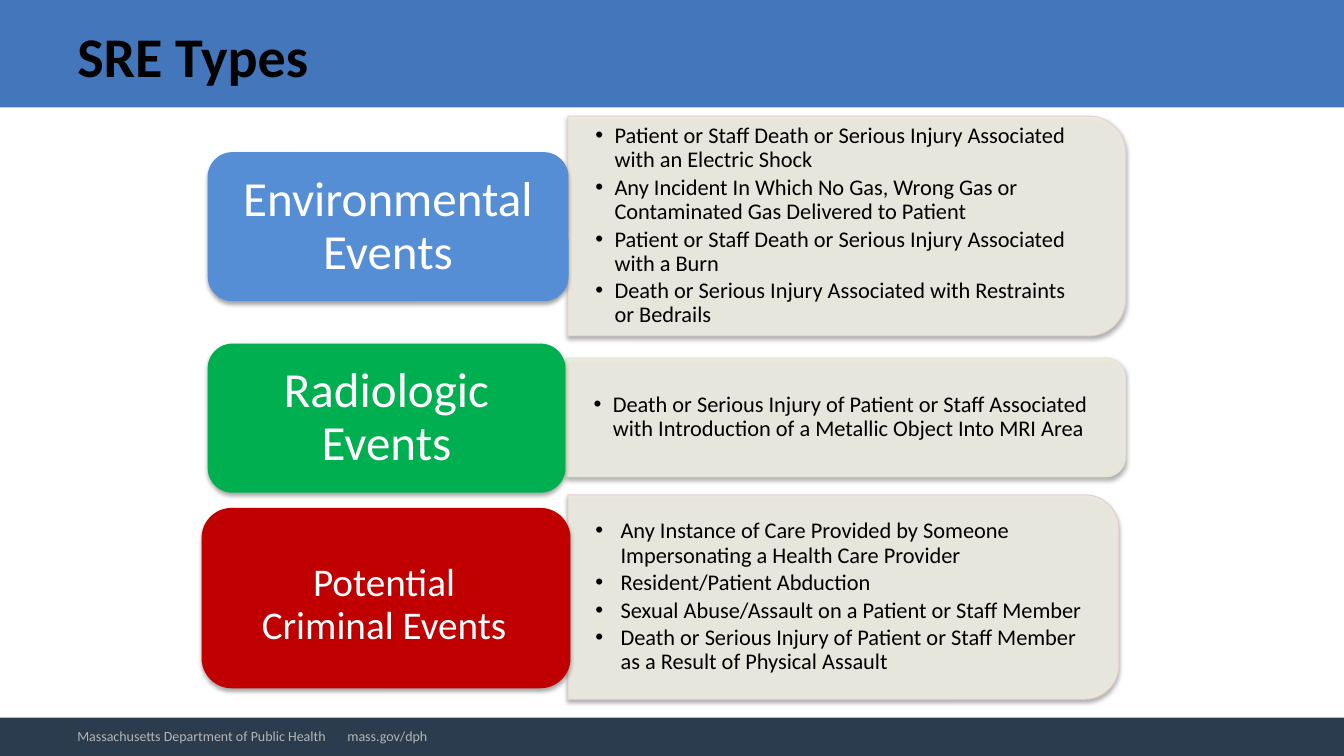
from dataclasses import dataclass
from lxml.etree import SubElement
from pptx import Presentation
from pptx.dml.color import RGBColor
from pptx.enum.shapes import MSO_SHAPE
from pptx.enum.text import MSO_ANCHOR, MSO_AUTO_SIZE, PP_ALIGN
from pptx.oxml.ns import qn
from pptx.util import Inches, Pt

RECT = MSO_SHAPE.RECTANGLE
ROUND = MSO_SHAPE.ROUNDED_RECTANGLE
TAB = MSO_SHAPE.ROUND_2_SAME_RECTANGLE
MIDDLE = MSO_ANCHOR.MIDDLE
FIXED = MSO_AUTO_SIZE.NONE
LEFT, CENTER = PP_ALIGN.LEFT, PP_ALIGN.CENTER
COLS = 40
SIDES = ("left", "top", "right", "bottom")


@dataclass(frozen=True)
class Theme:
    """Colours, font and type sizes of the slide."""
    font: str = "Calibri"
    ink: str = "000000"
    light: str = "FFFFFF"
    head: str = "4376BB"
    foot: str = "2A3C4E"
    muted: str = "B5B5B5"
    panel: str = "EEECE1"
    blue: str = "558ED5"
    green: str = "00B050"
    red: str = "C00000"
    title: int = 40
    label: int = 35
    small: int = 28
    body: int = 16
    note: int = 10


def apply(item, **values):
    """Set each named value on the item."""
    for name, value in values.items():
        setattr(item, name, value)


class Deck:
    """Draws styled elements on one slide, measured in grid units."""

    def __init__(self, theme):
        """Open a blank slide with a title and list placeholders."""
        self.theme = theme
        self.file = Presentation()
        apply(self.file, slide_width=Inches(13.33), slide_height=Inches(7.5))
        self.slide = self.file.slides.add_slide(self.file.slide_layouts[4])
        self.shapes = self.slide.shapes
        self.holds = {p.placeholder_format.idx: p for p in self.slide.placeholders}

    def unit(self, count):
        """Turn grid units into a length."""
        return round(self.file.slide_width * count / COLS)

    def hold(self, key, area):
        """Move a placeholder to an area, in front of what is drawn."""
        item = self.holds.pop(key)
        for name, size in zip(("left", "top", "width", "height"), area):
            setattr(item, name, self.unit(size))
        item.element.getparent().append(item.element)
        return item

    def fill_text(self, item, lines, size, color, bold=False, align=LEFT,
                  pad=(0.3, 0.15, 0.3, 0.15), **form):
        """Put paragraphs in a shape and return them."""
        frame = item.text_frame
        apply(frame, word_wrap=True, auto_size=FIXED, vertical_anchor=MIDDLE,
              text="\n".join(lines))
        apply(frame, **{f"margin_{s}": self.unit(p) for s, p in zip(SIDES, pad)})
        for para in frame.paragraphs:
            apply(para, alignment=align, space_before=Pt(0), **form)
            font = para.runs[0].font
            apply(font, name=self.theme.font, size=Pt(size), bold=bold)
            font.color.rgb = RGBColor.from_string(color)
        return frame.paragraphs

    def block(self, kind, area, color, edge=None, alpha=None, lift=False):
        """Draw a filled shape with an optional edge and soft shadow."""
        item = self.shapes.add_shape(kind, *map(self.unit, area))
        item.fill.solid()
        item.fill.fore_color.rgb = RGBColor.from_string(color)
        if edge:
            item.line.color.rgb = RGBColor.from_string(edge)
            item.line.width = Pt(0.75)
        else:
            item.line.fill.background()
        props = item.element.spPr
        if alpha:
            for tone in props.iter(qn("a:srgbClr")):
                SubElement(tone, qn("a:alpha"), val=str(alpha * 1000))
        item.shadow.inherit = False
        if lift:
            cast = SubElement(props.find(qn("a:effectLst")), qn("a:outerShdw"),
                              blurRad=str(Pt(3.1)), dist=str(Pt(1.8)),
                              dir="5400000", rotWithShape="0")
            tone = SubElement(cast, qn("a:srgbClr"), val=self.theme.ink)
            SubElement(tone, qn("a:alpha"), val="35000")
        return item

    def panel(self, area, edge):
        """Draw a panel rounded on its right side."""
        left, top, wide, high = area
        turned = (left + (wide - high) / 2, top + (high - wide) / 2, high, wide)
        item = self.block(TAB, turned, self.theme.panel, edge, 90, True)
        item.rotation = 90

    def label(self, area, text, color, size, pad):
        """Draw a coloured label."""
        item = self.block(ROUND, area, color, lift=True)
        self.fill_text(item, [text], size, self.theme.light, align=CENTER,
                       pad=pad, line_spacing=0.9)

    def points(self, key, area, lines, dent, right):
        """Fill a placeholder with a bulleted list."""
        item = self.hold(key, area)
        paras = self.fill_text(item, lines, self.theme.body, self.theme.ink,
                               pad=(0.82, 0.15, right, 0.15),
                               line_spacing=0.9, space_after=Pt(2.4))
        for para in paras:
            props = para._p.get_or_add_pPr()
            props.set("marL", str(Inches(dent)))
            props.set("indent", str(-Inches(dent)))
            SubElement(props, qn("a:buFont"), typeface="Arial")
            SubElement(props, qn("a:buChar"), char="•")

    def title(self, area, text):
        """Fill the title placeholder."""
        self.fill_text(self.hold(0, area), [text], self.theme.title,
                       self.theme.ink, bold=True)

    def note(self, area, text, stop):
        """Add a small line with one tab stop."""
        item = self.shapes.add_textbox(*map(self.unit, area))
        para = self.fill_text(item, [text], self.theme.note, self.theme.muted)[0]
        tabs = SubElement(para._p.get_or_add_pPr(), qn("a:tabLst"))
        SubElement(tabs, qn("a:tab"), pos=str(self.unit(stop)), algn="l")

    def save(self):
        """Drop unused placeholders and save the file."""
        for item in self.holds.values():
            item.element.getparent().remove(item.element)
        self.file.save("out.pptx")


def main():
    """Build the slide."""
    theme = Theme()
    deck = Deck(theme)
    deck.block(RECT, (0, 0, COLS, 3.2), theme.head)
    deck.block(RECT, (0, 21.36, COLS, 1.14), theme.foot)
    deck.title((2, 0.5, 15.8, 2.3), "SRE Types")
    even = (0.66, 0.42, 0.66, 0.42)
    groups = [
        dict(key=1, area=(16.9, 3.46, 16.6, 6.54), edge="E8D0D0",
             dent=0.19, right=1.12,
             tag=((6.18, 4.53, 10.74, 4.44), "Environmental Events",
                  theme.blue, theme.label, even),
             lines=["Patient or Staff Death or Serious Injury Associated with an Electric Shock",
                    "Any Incident In Which No Gas, Wrong Gas or Contaminated Gas Delivered to Patient",
                    "Patient or Staff Death or Serious Injury Associated with a Burn",
                    "Death or Serious Injury Associated with Restraints or Bedrails"]),
        dict(key=2, area=(16.85, 10.66, 16.65, 3.54), edge="DEE7D1",
             dent=0.19, right=1,
             tag=((6.18, 10.23, 10.65, 4.44), "Radiologic Events",
                  theme.green, theme.label, even),
             lines=["Death or Serious Injury of Patient or Staff Associated with "
                    "Introduction of a Metallic Object Into MRI Area"]),
        dict(key=4, area=(16.9, 14.73, 16.4, 6.09), edge="E3CBCB",
             dent=0.25, right=0.96,
             tag=((6, 15.12, 10.98, 5.37), "Potential Criminal Events",
                  theme.red, theme.small, (1.26, 0.9, 1.38, 0.48)),
             lines=["Any Instance of Care Provided by Someone Impersonating a Health Care Provider",
                    "Resident/Patient Abduction",
                    "Sexual Abuse/Assault on a Patient or Staff Member",
                    "Death or Serious Injury of Patient or Staff Member as a Result of Physical Assault"]),
    ]
    for group in groups:
        deck.panel(group["area"], group["edge"])
        deck.points(*(group[k] for k in ("key", "area", "lines", "dent", "right")))
        deck.label(*group["tag"])
    deck.note((2, 21.36, 12.5, 1.1),
              "Massachusetts Department of Public Health\tmass.gov/dph", 8.04)
    deck.save()


if __name__ == "__main__":
    main()
